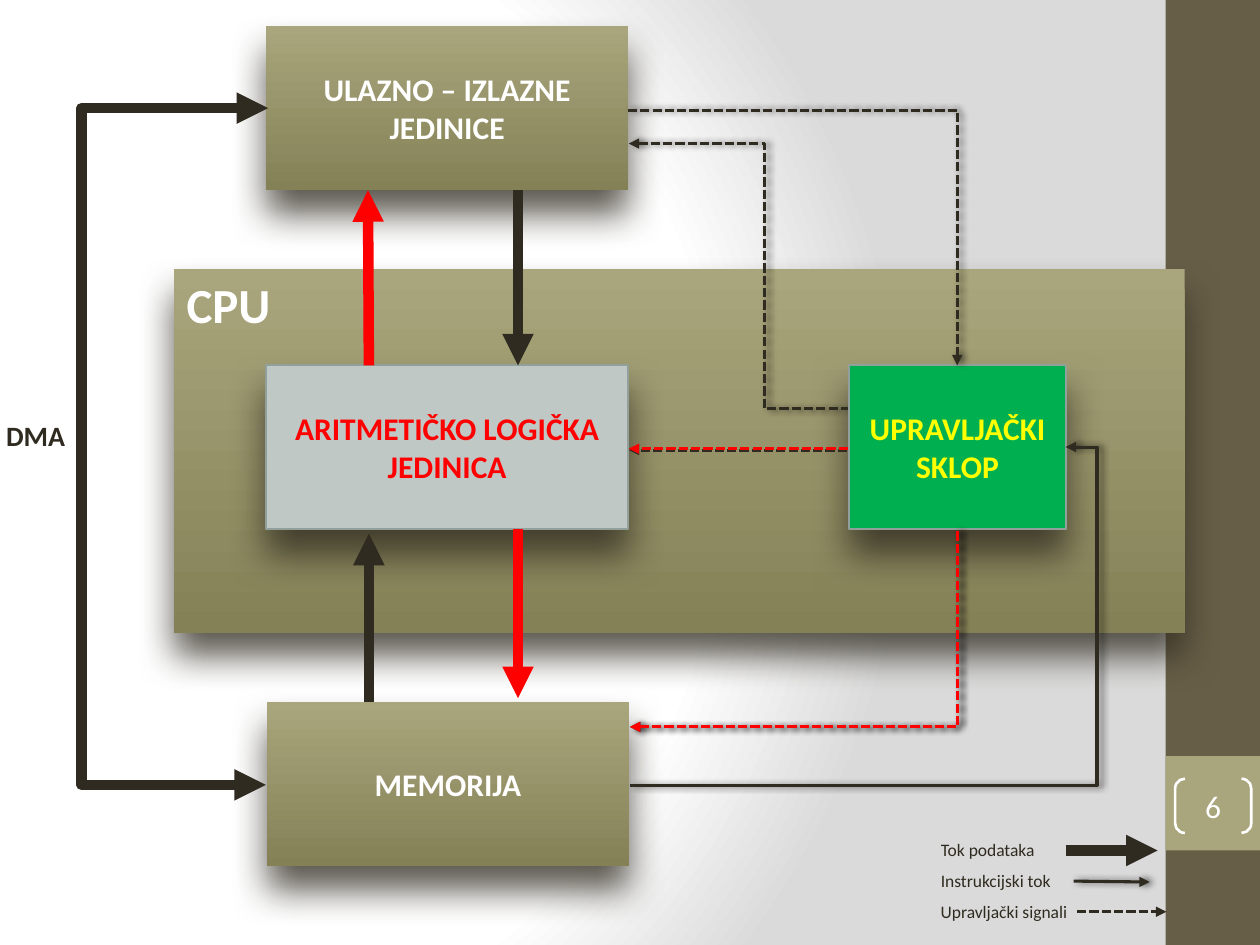
from pptx import Presentation
from pptx import oxml
from pptx.dml.color import RGBColor
from pptx.enum import dml, shapes, text
from pptx.oxml.ns import nsdecls, qn
from pptx.util import Pt

DARK = RGBColor(0x2F, 0x2B, 0x20)
BROWN = RGBColor(0x67, 0x5E, 0x47)
OLIVE = RGBColor(0xA9, 0xA5, 0x7C)
MOSS = RGBColor(0x85, 0x81, 0x57)
GREY = RGBColor(0xBF, 0xC8, 0xC4)
EDGE = RGBColor(0x91, 0xA0, 0x9A)
PALE = RGBColor(0xDA, 0xDA, 0xDA)
GREEN = RGBColor(0x00, 0xB0, 0x50)
RED = RGBColor(0xFF, 0x00, 0x00)
YELLOW = RGBColor(0xFF, 0xFF, 0x00)
WHITE = RGBColor(0xFF, 0xFF, 0xFF)
BLACK = RGBColor(0x00, 0x00, 0x00)

FADE = [OLIVE, MOSS]
SOFT = (DARK, 78, 21, 14, 90)
THIN = (BLACK, 60, 4, 2, 0)
INSETS = ("margin_left", "margin_top", "margin_right", "margin_bottom")
MID = {"vertical_anchor": text.MSO_ANCHOR.MIDDLE, "word_wrap": True}
TOP = {"vertical_anchor": text.MSO_ANCHOR.TOP, "word_wrap": True}
FREE = {"word_wrap": False, "auto_size": text.MSO_AUTO_SIZE.SHAPE_TO_FIT_TEXT}
LEFT, CENTER = text.PP_ALIGN.LEFT, text.PP_ALIGN.CENTER


def apply(item, values):
    for name, value in values.items():
        setattr(item, name, value)


def backdrop(slide):
    fill = slide.background.fill
    fill.solid()
    solid = slide.background._cSld.find(".//" + qn("a:solidFill"))
    stops = "".join(
        f'<a:gs pos="{pos * 1000}"><a:srgbClr val="{color}"/></a:gs>'
        for pos, color in ((0, WHITE), (75, WHITE), (100, PALE)))
    grad = oxml.parse_xml(
        f'<a:gradFill {nsdecls("a")} rotWithShape="1"><a:gsLst>{stops}</a:gsLst>'
        '<a:path path="circle"><a:fillToRect l="20000" t="50000" '
        'r="100000" b="50000"/></a:path></a:gradFill>')
    solid.getparent().replace(solid, grad)


def shade(item, look=None):
    inner = ""
    if look:
        color, alpha, blur, dist, angle = look
        inner = (f'<a:outerShdw blurRad="{Pt(blur)}" dist="{Pt(dist)}" '
                 f'dir="{angle * 60000}" algn="ctr" rotWithShape="0">'
                 f'<a:srgbClr val="{color}"><a:alpha val="{alpha * 1000}"/>'
                 '</a:srgbClr></a:outerShdw>')
    item._element.spPr.append(oxml.parse_xml(
        f'<a:effectLst {nsdecls("a")}>{inner}</a:effectLst>'))


def write(item, words, size, color, bold, frame, align):
    apply(item.text_frame, frame)
    para = item.text_frame.paragraphs[0]
    para.alignment = align
    run = para.add_run()
    run.text = words
    apply(run.font, {"name": "Calibri", "size": Pt(size), "bold": bold})
    run.font.color.rgb = color


def box(slide, area, fill, edge=None, look=None):
    item = slide.shapes.add_shape(shapes.MSO_SHAPE.RECTANGLE, *map(Pt, area))
    if fill is FADE:
        item.fill.gradient()
        item.fill.gradient_angle = 270
        for stop, color in zip(item.fill.gradient_stops, fill):
            stop.color.rgb = color
    else:
        item.fill.solid()
        item.fill.fore_color.rgb = fill
    if edge:
        item.line.color.rgb = edge
        item.line.width = Pt(1)
    else:
        item.line.fill.background()
    shade(item, look)
    return item


def unit(slide, area, words, fill, color, edge=None):
    item = box(slide, area, fill, edge, SOFT)
    write(item, words, 18, color, True, MID, CENTER)


def label(slide, area, words, size, bold=False):
    item = slide.shapes.add_textbox(*map(Pt, area))
    write(item, words, size, DARK, bold, FREE, LEFT)


def arrow(slide, start, end, color=DARK, width=1.75, dash=False,
          tips=("tail",), look=None, bend=None, mid=None):
    kind = shapes.MSO_CONNECTOR.ELBOW if bend else shapes.MSO_CONNECTOR.STRAIGHT
    item = slide.shapes.add_connector(kind, *map(Pt, start + end))
    item.line.color.rgb = color
    item.line.width = Pt(width)
    if dash:
        item.line.dash_style = dml.MSO_LINE.SQUARE_DOT
    for tip in tips:
        item.line._get_or_add_ln().append(oxml.parse_xml(
            f'<a:{tip}End {nsdecls("a")} type="triangle"/>'))
    geom = item._element.spPr.find(qn("a:prstGeom"))
    if bend == "corner":
        geom.set("prst", "bentConnector2")
    elif bend == "step":
        ratio = round((mid - start[0]) / (end[0] - start[0]) * 100000)
        geom.get_or_add_avLst().append(oxml.parse_xml(
            f'<a:gd {nsdecls("a")} name="adj1" fmla="val {ratio}"/>'))
    shade(item, look)


def number(slide):
    item = slide.shapes.add_shape(
        shapes.MSO_SHAPE.DOUBLE_BRACKET, Pt(671.5), Pt(445), Pt(43.5), Pt(31))
    item.adjustments[0] = 0.18
    item.fill.background()
    item.line.color.rgb = WHITE
    item.line.width = Pt(1.5)
    shade(item)
    frame = {**MID, **dict.fromkeys(INSETS, 0)}
    write(item, "6", 18, WHITE, False, frame, CENTER)


def legend(slide):
    names = ("Tok podataka", "Instrukcijski tok", "Upravljački signali")
    for row, (name, wide) in enumerate(zip(names, (70, 78.5, 88))):
        label(slide, (530.5, 476 + 17.6 * row, wide, 19.5), name, 10)
    arrow(slide, (609, 486), (661.5, 486), width=6)
    arrow(slide, (613.5, 503.5), (657, 504), look=THIN)
    arrow(slide, (615.5, 521), (666.5, 521), dash=True)


def main():
    deck = Presentation()
    apply(deck, {"slide_width": Pt(720), "slide_height": Pt(540)})
    slide = deck.slides.add_slide(deck.slide_layouts[6])
    backdrop(slide)
    box(slide, (666, 0, 54, 540), BROWN)
    box(slide, (666, 432, 54, 54), OLIVE)

    cpu = box(slide, (99.5, 153.5, 577.5, 208), FADE, look=SOFT)
    write(cpu, "CPU", 28, WHITE, True, TOP, LEFT)
    arrow(slide, (359.3, 82), (514, 233.5), dash=True, tips=("head",),
          look=THIN, bend="step", mid=437)
    unit(slide, (152, 208.8, 207, 93.5), "ARITMETIČKO LOGIČKA JEDINICA",
         GREY, RED, EDGE)
    unit(slide, (485.3, 208.8, 123.8, 93.5), "UPRAVLJAČKI SKLOP",
         GREEN, YELLOW, EDGE)
    unit(slide, (152, 15, 207, 93.5), "ULAZNO – IZLAZNE JEDINICE", FADE, WHITE)
    arrow(slide, (358.8, 63), (547, 208.8), dash=True, look=THIN, bend="corner")
    arrow(slide, (296, 108.5), (296, 208.8), width=6)
    arrow(slide, (210.8, 401.5), (210.8, 305), width=6)
    arrow(slide, (484, 257.2), (359.3, 257.2), dash=True)
    arrow(slide, (609, 255.5), (360, 448.7), tips=("head",), look=THIN,
          bend="step", mid=627)
    arrow(slide, (153.3, 61.8), (152, 448.5), width=6, tips=("head", "tail"),
          bend="step", mid=47)
    label(slide, (-3.6, 235.5, 49, 26.5), "DMA", 16, True)
    unit(slide, (152.5, 401.2, 207, 93.5), "MEMORIJA", FADE, WHITE)

    arrow(slide, (484.5, 256.4), (359.3, 256.4), RED, dash=True)
    arrow(slide, (296, 302.3), (296, 399), RED, 6)
    arrow(slide, (210.8, 208.8), (210.3, 108.7), RED, 6)
    for color in (DARK, RED):
        arrow(slide, (360, 415.4), (547.3, 303), color, dash=True,
              tips=("head",), look=THIN, bend="corner")
    legend(slide)
    number(slide)
    deck.save("out.pptx")


if __name__ == "__main__":
    main()
